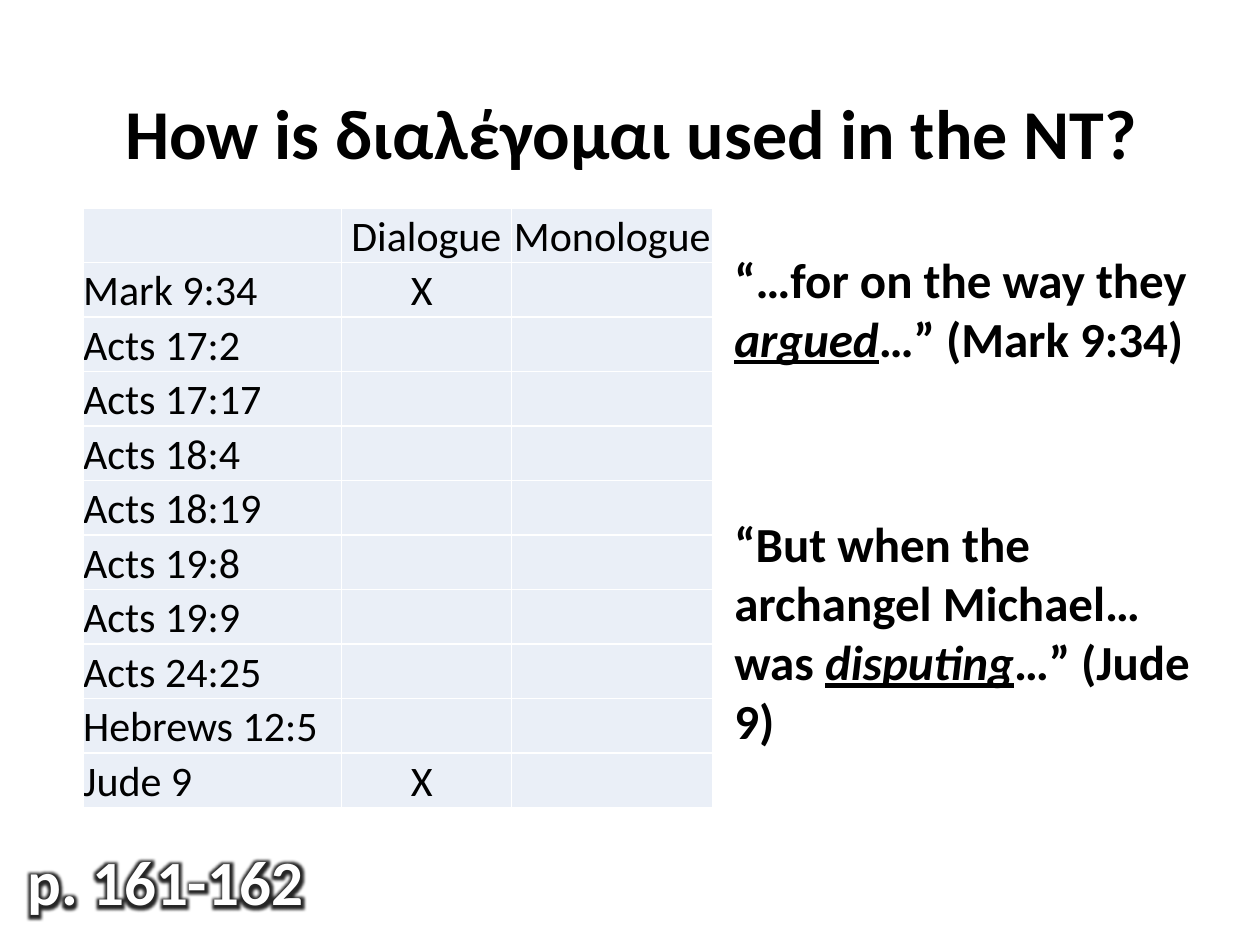
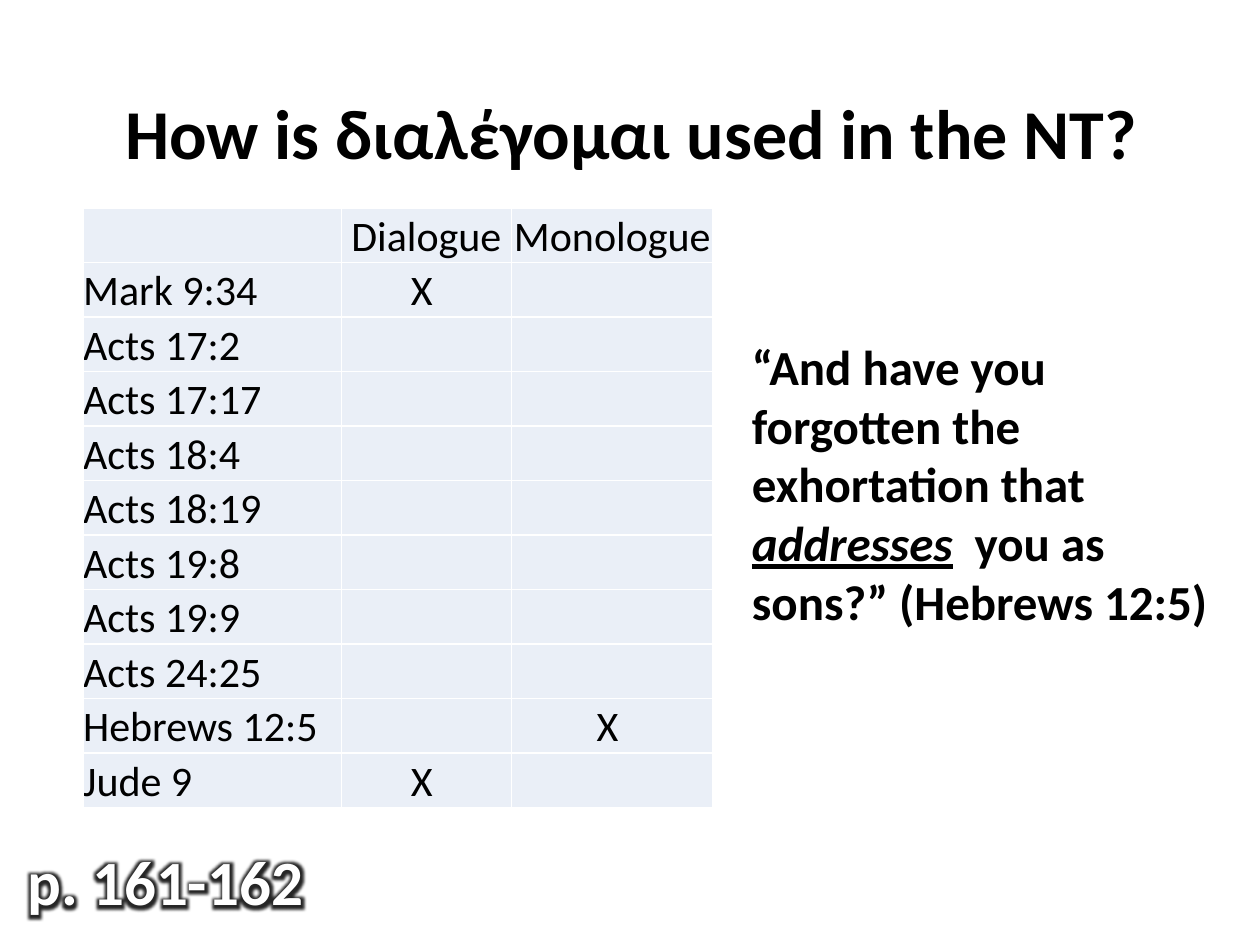
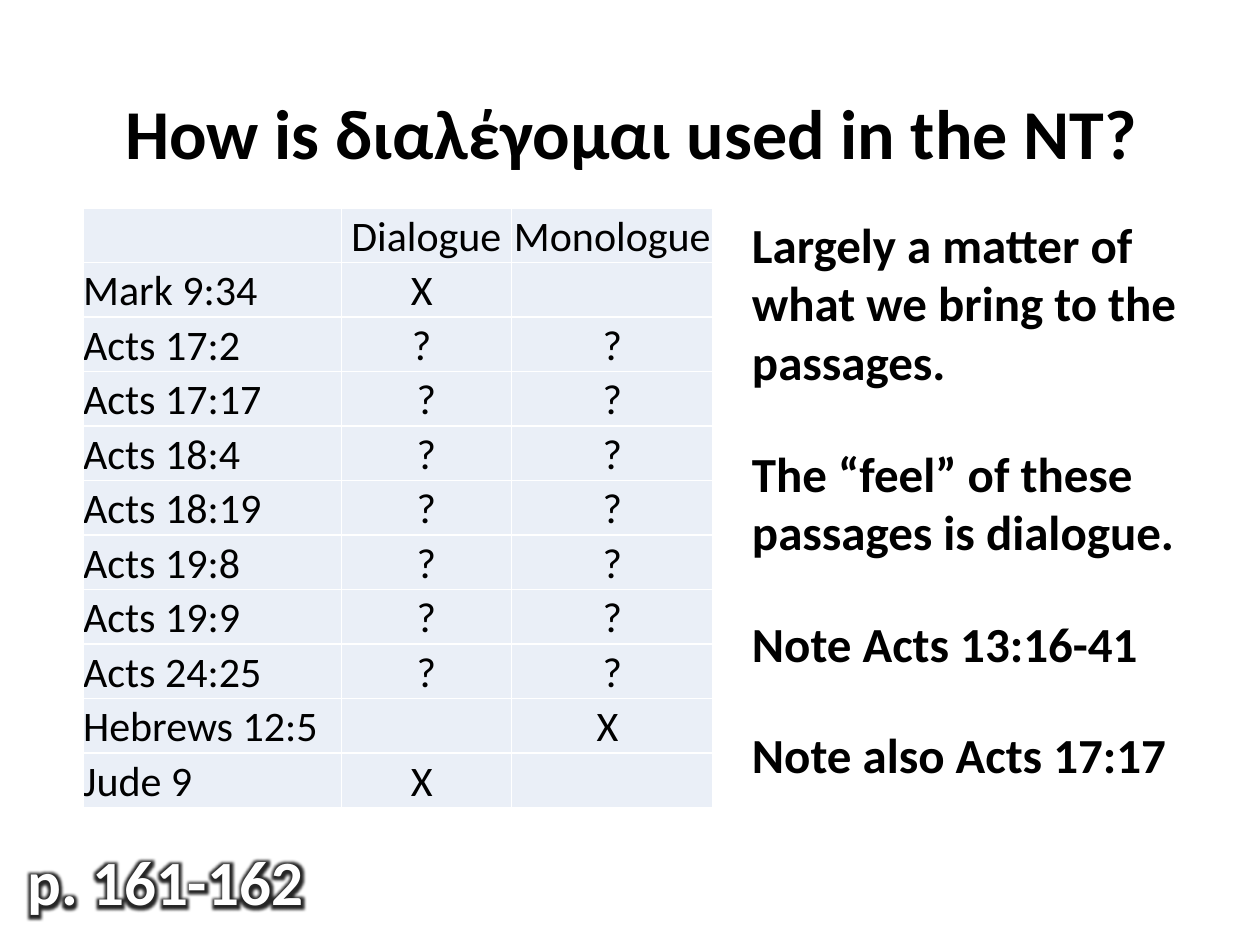
from dataclasses import dataclass

from lxml.etree import SubElement
from pptx import Presentation
from pptx.dml.color import RGBColor
from pptx.enum.text import MSO_ANCHOR, MSO_AUTO_SIZE, PP_ALIGN
from pptx.oxml.ns import qn
from pptx.util import Inches, Pt


@dataclass(frozen=True)
class Theme:
    font: str = "Calibri"
    text: str = "000000"
    light: str = "FFFFFF"
    cell: str = "EAEFF7"
    glow: str = "262626"
    title_size: int = 40
    page_size: int = 36
    quote_size: int = 28
    table_size: int = 24
    border_width: int = 1
    glow_radius: int = 8


TITLE = "How is διαλέγομαι used in the NT?"
PAGES = "p. 161-162"
HEADINGS = ("", "Dialogue", "Monologue")
COLUMN_WIDTHS = (2.05, 1.35, 1.6)
PASSAGES = (
    "Mark 9:34", "Acts 17:2", "Acts 17:17", "Acts 18:4", "Acts 18:19",
    "Acts 19:8", "Acts 19:9", "Acts 24:25", "Hebrews 12:5", "Jude 9",
)
QUOTE_WIDTH = 3.93
QUOTE_LEFT = 5.87

CLEAR_DIALOGUE = {"Mark 9:34": ("X ", ""), "Jude 9": ("X ", "")}
WITH_MONOLOGUE = {**CLEAR_DIALOGUE, "Hebrews 12:5": ("", "X ")}
ALL_MARKS = {
    **{passage: ("?", "?") for passage in PASSAGES},
    "Acts 17:2": ("? ", "?"),
    **WITH_MONOLOGUE,
}


class Deck:
    def __init__(self, theme):
        self.theme = theme
        self.presentation = Presentation()
        self.presentation.slide_width = Inches(10)
        self.presentation.slide_height = Inches(7.5)
        self.slide = None

    def style_run(self, run, size, color, bold=True):
        run.font.name = self.theme.font
        run.font.size = Pt(size)
        run.font.bold = bold
        run.font.color.rgb = RGBColor.from_string(color)

    def text_box(self, left, top, width, height, paragraphs, size, color=None,
                 wrap=True, align=PP_ALIGN.LEFT, space_after=0):
        box = self.slide.shapes.add_textbox(
            Inches(left), Inches(top), Inches(width), Inches(height))
        frame = box.text_frame
        frame.word_wrap = wrap
        frame.auto_size = MSO_AUTO_SIZE.SHAPE_TO_FIT_TEXT
        for index, text in enumerate(paragraphs):
            paragraph = frame.add_paragraph() if index else frame.paragraphs[0]
            paragraph.alignment = align
            paragraph.space_after = Pt(space_after)
            for position, part in enumerate(text.split("*")):
                run = paragraph.add_run()
                run.text = part
                self.style_run(run, size, color or self.theme.text)
                if position % 2:
                    run.font.italic = True
                    run.font.underline = True
        return box

    def add_glow(self, run):
        properties = run.font.fill._xPr
        effects = SubElement(properties, qn("a:effectLst"))
        properties.find(qn("a:solidFill")).addnext(effects)
        glow = SubElement(effects, qn("a:glow"), rad=str(Pt(self.theme.glow_radius)))
        SubElement(glow, qn("a:srgbClr"), val=self.theme.glow)

    def add_slide(self, marks):
        self.slide = self.presentation.slides.add_slide(self.presentation.slide_layouts[6])
        self.slide.background.fill.solid()
        self.slide.background.fill.fore_color.rgb = RGBColor.from_string(self.theme.light)
        self.text_box(0.85, 0.66, 8.32, 0.77, [TITLE], self.theme.title_size,
                      wrap=False, align=PP_ALIGN.CENTER)
        pages = self.text_box(0.12, 6.64, 2.41, 0.71, [PAGES], self.theme.page_size,
                              self.theme.light, wrap=False)
        self.add_glow(pages.text_frame.paragraphs[0].runs[0])
        self.usage_table(marks)

    def usage_table(self, marks):
        rows = [HEADINGS] + [(passage, *marks.get(passage, ("", ""))) for passage in PASSAGES]
        table = self.slide.shapes.add_table(
            len(rows), len(HEADINGS), Inches(0.66), Inches(1.65), Inches(5), Inches(4.76)).table
        table.first_row = False
        table.horz_banding = False
        for column, width in zip(table.columns, COLUMN_WIDTHS):
            column.width = Inches(width)
        for row_index, row in enumerate(rows):
            for column_index, text in enumerate(row):
                align = PP_ALIGN.CENTER if column_index else PP_ALIGN.LEFT
                self.table_cell(table.cell(row_index, column_index), text, align)

    def table_cell(self, cell, text, align):
        cell.margin_left = cell.margin_right = cell.margin_top = cell.margin_bottom = 0
        cell.vertical_anchor = MSO_ANCHOR.BOTTOM
        properties = cell._tc.get_or_add_tcPr()
        for side in ("a:lnL", "a:lnR", "a:lnT", "a:lnB"):
            line = SubElement(properties, qn(side), w=str(Pt(self.theme.border_width)))
            fill = SubElement(line, qn("a:solidFill"))
            SubElement(fill, qn("a:srgbClr"), val=self.theme.light)
        cell.fill.solid()
        cell.fill.fore_color.rgb = RGBColor.from_string(self.theme.cell)
        if text:
            cell.text_frame.text = text
            paragraph = cell.text_frame.paragraphs[0]
            paragraph.alignment = align
            self.style_run(paragraph.runs[0], self.theme.table_size, self.theme.text, bold=False)

    def quote(self, left, top, height, *paragraphs, space_after=0):
        self.text_box(left, top, QUOTE_WIDTH, height, paragraphs,
                      self.theme.quote_size, space_after=space_after)


def main():
    deck = Deck(Theme())

    deck.add_slide(CLEAR_DIALOGUE)
    deck.quote(5.73, 1.93, 1.04, "“…for on the way they *argued*…” (Mark 9:34)")
    deck.quote(5.73, 4.03, 1.99,
               "“But when the archangel Michael…was *disputing*…” (Jude 9)")

    deck.add_slide(WITH_MONOLOGUE)
    deck.quote(QUOTE_LEFT, 2.62, 2.46,
               "“And have you forgotten the exhortation that *addresses*"
               "  you as sons?” (Hebrews 12:5)")

    deck.add_slide(ALL_MARKS)
    deck.quote(QUOTE_LEFT, 1.65, 4.66,
               "Largely a matter of what we bring to the passages.",
               "The “feel” of these passages is dialogue.",
               "Note Acts 13:16-41",
               "Note also Acts 17:17",
               space_after=30)

    deck.presentation.save("out.pptx")


if __name__ == "__main__":
    main()
